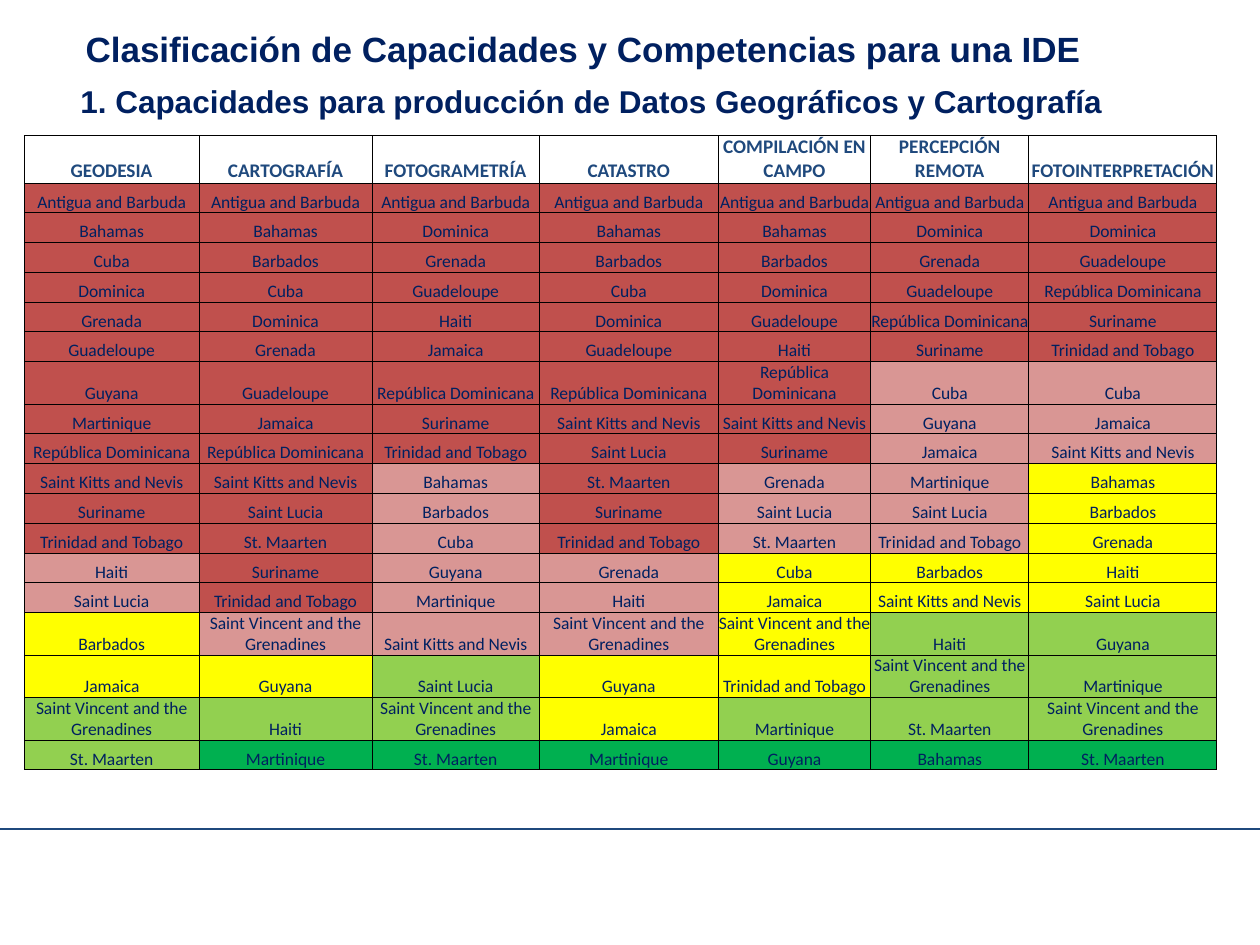
from dataclasses import dataclass

from lxml import etree
from pptx import Presentation
from pptx.dml.color import RGBColor
from pptx.enum import shapes, text
from pptx.oxml.ns import qn
from pptx.util import Cm, Pt


@dataclass(frozen=True)
class Theme:
    heading_font: str = "Arial"
    table_font: str = "Calibri"
    title_size: int = 20
    subtitle_size: int = 18
    header_size: int = 11
    country_size: int = 10
    navy: str = "002060"
    blue: str = "1F497D"
    white: str = "FFFFFF"
    border: str = "000000"
    # From the lowest to the highest level of capacity
    levels: tuple = ("C0504D", "D99694", "FFFF00", "92D050", "00B050")


# Discipline, column width in cm, countries at each of the five levels
DISCIPLINES = [
    ("GEODESIA", 3.52, (
        "Antigua and Barbuda, Bahamas, Cuba, Dominica, Grenada, Guadeloupe, Guyana, Martinique, "
        "República Dominicana, Saint Kitts and Nevis, Suriname, Trinidad and Tobago",
        "Haiti, Saint Lucia",
        "Barbados, Jamaica",
        "Saint Vincent and the Grenadines, St. Maarten",
        "")),
    ("CARTOGRAFÍA", 3.49, (
        "Antigua and Barbuda, Bahamas, Barbados, Cuba, Dominica, Grenada, Guadeloupe, Jamaica, "
        "República Dominicana, Saint Kitts and Nevis, Saint Lucia, St. Maarten, Suriname, "
        "Trinidad and Tobago",
        "Saint Vincent and the Grenadines",
        "Guyana",
        "Haiti",
        "Martinique")),
    ("FOTOGRAMETRÍA", 3.37, (
        "Antigua and Barbuda, Dominica, Grenada, Guadeloupe, Haiti, Jamaica, "
        "República Dominicana, Suriname, Trinidad and Tobago",
        "Bahamas, Barbados, Cuba, Guyana, Martinique, Saint Kitts and Nevis",
        "",
        "Saint Lucia, Saint Vincent and the Grenadines",
        "St. Maarten")),
    ("CATASTRO", 3.61, (
        "Antigua and Barbuda, Bahamas, Barbados, Cuba, Dominica, Guadeloupe, "
        "República Dominicana, Saint Kitts and Nevis, Saint Lucia, St. Maarten, Suriname, "
        "Trinidad and Tobago",
        "Grenada, Haiti, Saint Vincent and the Grenadines",
        "Guyana, Jamaica",
        "",
        "Martinique")),
    ("COMPILACIÓN EN CAMPO", 3.07, (
        "Antigua and Barbuda, Bahamas, Barbados, Dominica, Guadeloupe, Haiti, "
        "República Dominicana, Saint Kitts and Nevis, Suriname",
        "Grenada, Saint Lucia, St. Maarten",
        "Cuba, Jamaica, Saint Vincent and the Grenadines, Trinidad and Tobago",
        "Martinique",
        "Guyana")),
    ("PERCEPCIÓN REMOTA", 3.19, (
        "Antigua and Barbuda, Dominica, Grenada, Guadeloupe, República Dominicana, Suriname",
        "Cuba, Guyana, Jamaica, Martinique, Saint Lucia, Trinidad and Tobago",
        "Barbados, Saint Kitts and Nevis",
        "Haiti, Saint Vincent and the Grenadines, St. Maarten",
        "Bahamas")),
    ("FOTOINTERPRETACIÓN", 3.79, (
        "Antigua and Barbuda, Dominica, Guadeloupe, República Dominicana, Suriname, "
        "Trinidad and Tobago",
        "Cuba, Jamaica, Saint Kitts and Nevis",
        "Bahamas, Barbados, Grenada, Haiti, Saint Lucia",
        "Guyana, Martinique, Saint Vincent and the Grenadines",
        "St. Maarten")),
]


def write(frame, content, *, size, color, font, bold=False, align=text.PP_ALIGN.LEFT,
          line_spacing=None, space_after=None):
    """Put one formatted paragraph into a text frame."""
    frame.word_wrap = True
    paragraph = frame.paragraphs[0]
    paragraph.alignment = align
    if line_spacing:
        paragraph.line_spacing = line_spacing
    if space_after:
        paragraph.space_after = Pt(space_after)
    run = paragraph.add_run()
    run.text = content
    run.font.size, run.font.name, run.font.bold = Pt(size), font, bold
    run.font.color.rgb = RGBColor.from_string(color)


class SlideBuilder:
    def __init__(self, presentation, theme):
        self.theme = theme
        self.slide = presentation.slides.add_slide(presentation.slide_layouts[5])

    def heading_style(self, size):
        return dict(size=size, color=self.theme.navy, font=self.theme.heading_font, bold=True)

    def title(self, content, left, top, width, height):
        title = self.slide.shapes.title
        title.left, title.top, title.width, title.height = map(Cm, (left, top, width, height))
        title.text_frame.vertical_anchor = text.MSO_ANCHOR.TOP
        title.text_frame.auto_size = text.MSO_AUTO_SIZE.NONE
        write(title.text_frame, content, align=text.PP_ALIGN.JUSTIFY, line_spacing=1.07,
              space_after=8, **self.heading_style(self.theme.title_size))

    def subtitle(self, content, left, top, width, height):
        subtitle = self.slide.shapes.add_textbox(*map(Cm, (left, top, width, height)))
        write(subtitle.text_frame, content, **self.heading_style(self.theme.subtitle_size))

    def rule(self, left, right, y):
        rule = self.slide.shapes.add_connector(
            shapes.MSO_CONNECTOR.STRAIGHT, Cm(left), Cm(y), Cm(right), Cm(y))
        rule.line.color.rgb = RGBColor.from_string(self.theme.blue)
        rule.line.width = Pt(0.75)
        etree.SubElement(rule._element.spPr, qn("a:effectLst"))

    def cell(self, cell, content, fill, **style):
        cell.margin_left = cell.margin_right = cell.margin_top = cell.margin_bottom = 0
        cell.vertical_anchor = text.MSO_ANCHOR.BOTTOM
        write(cell.text_frame, content, font=self.theme.table_font,
              align=text.PP_ALIGN.CENTER, **style)
        # Borders come before the fill in the cell properties
        properties = cell._tc.get_or_add_tcPr()
        for side in ("a:lnL", "a:lnR", "a:lnT", "a:lnB"):
            border = etree.SubElement(properties, qn(side), w=str(Pt(0.5)))
            solid = etree.SubElement(border, qn("a:solidFill"))
            etree.SubElement(solid, qn("a:srgbClr"), val=self.theme.border)
        cell.fill.solid()
        cell.fill.fore_color.rgb = RGBColor.from_string(fill)

    def capacity_table(self, disciplines, left, top, row_height):
        theme = self.theme
        row_count = 1 + sum(len(names.split(", ")) for names in disciplines[0][2] if names)
        width = sum(column_width for _, column_width, _ in disciplines)
        table = self.slide.shapes.add_table(
            row_count, len(disciplines), Cm(left), Cm(top), Cm(width),
            Cm(row_height * row_count)).table
        table.horz_banding = False
        for row in table.rows:
            row.height = Cm(row_height)
        for column, (discipline, column_width, levels) in enumerate(disciplines):
            table.columns[column].width = Cm(column_width)
            self.cell(table.cell(0, column), discipline, theme.white,
                      size=theme.header_size, color=theme.blue, bold=True)
            countries = [(name, fill) for names, fill in zip(levels, theme.levels) if names
                         for name in names.split(", ")]
            for row, (country, fill) in enumerate(countries, start=1):
                self.cell(table.cell(row, column), country, fill,
                          size=theme.country_size, color=theme.navy)


def main():
    presentation = Presentation()
    presentation.slide_width, presentation.slide_height = Cm(25.4), Cm(19.05)
    builder = SlideBuilder(presentation, Theme())

    # Footer rule
    builder.rule(0, 25.4, 16.71)
    # Countries by discipline, coloured by level
    builder.capacity_table(DISCIPLINES, left=0.49, top=2.73, row_height=0.6)
    # Headings
    builder.subtitle("1. Capacidades para producción de Datos Geográficos y Cartografía",
                     1.37, 1.53, 24, 1.03)
    builder.title("Clasificación de Capacidades y Competencias para una IDE",
                  1.47, 0.36, 21.6, 1.17)

    presentation.save("out.pptx")


if __name__ == "__main__":
    main()
